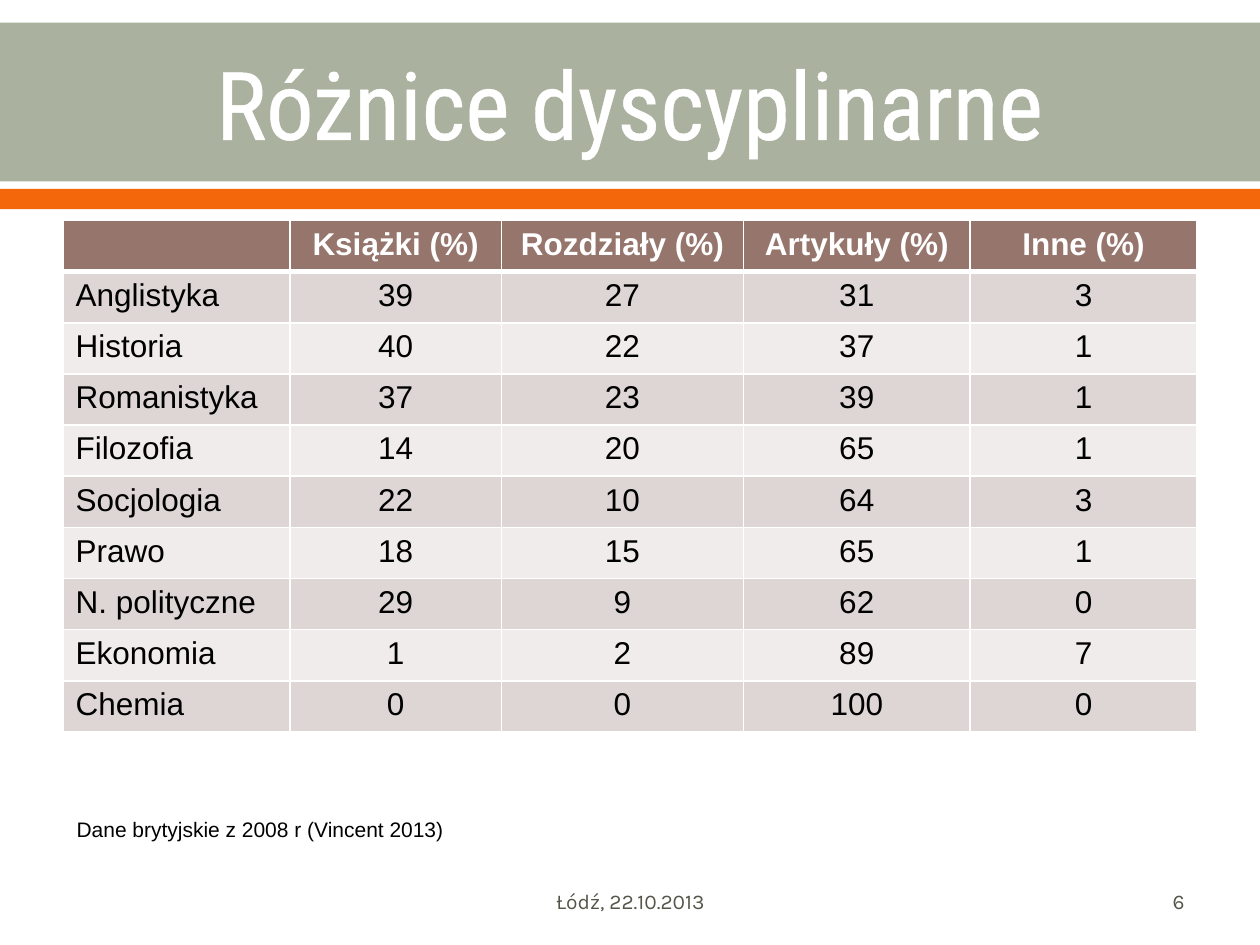
from lxml.etree import SubElement
from pptx import Presentation
from pptx.dml.color import RGBColor
from pptx.enum.shapes import MSO_SHAPE
from pptx.enum.text import MSO_ANCHOR, PP_ALIGN
from pptx.oxml.ns import qn
from pptx.util import Inches, Pt

COLORS = {
    "white": "FFFFFF", "black": "000000", "sage": "ABB19F", "orange": "F4680B",
    "header": "96756C", "odd": "DDD6D4", "even": "EFECEB", "footer": "55554A",
}
HEADINGS = ["", "Książki (%)", "Rozdziały (%)", "Artykuły (%)", "Inne (%)"]
DISCIPLINES = [
    ("Anglistyka", 39, 27, 31, 3),
    ("Historia", 40, 22, 37, 1),
    ("Romanistyka", 37, 23, 39, 1),
    ("Filozofia", 14, 20, 65, 1),
    ("Socjologia", 22, 10, 64, 3),
    ("Prawo", 18, 15, 65, 1),
    ("N. polityczne", 29, 9, 62, 0),
    ("Ekonomia", 1, 2, 89, 7),
    ("Chemia", 0, 0, 100, 0),
]
COLUMN_WIDTHS = [1.8, 1.68, 1.92, 1.8, 1.8]
ROW_HEIGHT = 4.06 / (len(DISCIPLINES) + 1)


def write(frame, text, align, color, **font_format):
    """Put one formatted line into a text frame and return its run."""
    para = frame.paragraphs[0]
    para.alignment = align
    span = para.add_run()
    span.text = text
    span.font.color.rgb = RGBColor.from_string(COLORS[color])
    for name, value in font_format.items():
        setattr(span.font, name, value)
    return span


def add_line(parent, tag, width):
    """Add a solid white line element to cell or run properties."""
    line = SubElement(parent, qn(tag), w=str(Pt(width)))
    fill = SubElement(line, qn("a:solidFill"))
    SubElement(fill, qn("a:srgbClr"), val=COLORS["white"])
    return line


deck = Presentation()
deck.slide_width, deck.slide_height = Inches(10), Inches(7.5)
page = deck.slides.add_slide(deck.slide_layouts[6])

# Title bands
for top, height, color in [(0.18, 1.26, "sage"), (1.5, 0.16, "orange")]:
    band = page.shapes.add_shape(
        MSO_SHAPE.RECTANGLE, 0, Inches(top), Inches(10), Inches(height))
    band.shadow.inherit = False
    band.fill.solid()
    band.fill.fore_color.rgb = RGBColor.from_string(COLORS[color])
    band.line.fill.background()

# Title, source note and footer
texts = [
    ("Różnice dyscyplinarne", (0.5, 0.2, 9, 1.22), PP_ALIGN.CENTER,
     MSO_ANCHOR.MIDDLE, True, "white", "Roboto Condensed", 54),
    ("Dane brytyjskie z 2008 r (Vincent 2013)", (0.51, 6.43, 3.14, 0.3), PP_ALIGN.LEFT,
     MSO_ANCHOR.TOP, False, "black", "Arial", 12),
    ("6", (7.17, 6.95, 2.33, 0.4), PP_ALIGN.RIGHT,
     MSO_ANCHOR.MIDDLE, True, "footer", "Karla", 12),
    ("Łódź, 22.10.2013", (3.42, 6.95, 3.17, 0.4), PP_ALIGN.CENTER,
     MSO_ANCHOR.MIDDLE, True, "footer", "Karla", 12),
]
for text, place, align, anchor, wrap, color, font, size in texts:
    box = page.shapes.add_textbox(*map(Inches, place))
    box.text_frame.word_wrap = wrap
    box.text_frame.vertical_anchor = anchor
    span = write(box.text_frame, text, align, color, name=font, size=Pt(size))
    if color == "white":
        properties = span.font._element if hasattr(span.font, "_element") else span._r.rPr
        properties.insert(0, add_line(properties, "a:ln", 1.1))

# Table of publication types by discipline
rows = [HEADINGS, *DISCIPLINES]
table = page.shapes.add_table(
    len(rows), len(HEADINGS), Inches(0.5), Inches(1.75),
    Inches(sum(COLUMN_WIDTHS)), Inches(ROW_HEIGHT * len(rows))).table
for column, width in zip(table.columns, COLUMN_WIDTHS):
    column.width = Inches(width)

for row_index, values in enumerate(rows):
    table.rows[row_index].height = Inches(ROW_HEIGHT)
    is_header = row_index == 0
    fill_color = "header" if is_header else "odd" if row_index % 2 else "even"
    for column_index, value in enumerate(values):
        cell = table.cell(row_index, column_index)
        write(cell.text_frame, str(value),
              PP_ALIGN.CENTER if column_index else PP_ALIGN.LEFT,
              "white" if is_header else "black",
              name="Arial", size=Pt(18), bold=is_header)
        properties = cell._tc.get_or_add_tcPr()
        for side in "LRTB":
            thick = (side == "B" and is_header) or (side == "T" and row_index == 1)
            add_line(properties, f"a:ln{side}", 3 if thick else 1)
        cell.fill.solid()
        cell.fill.fore_color.rgb = RGBColor.from_string(COLORS[fill_color])

deck.save("out.pptx")
